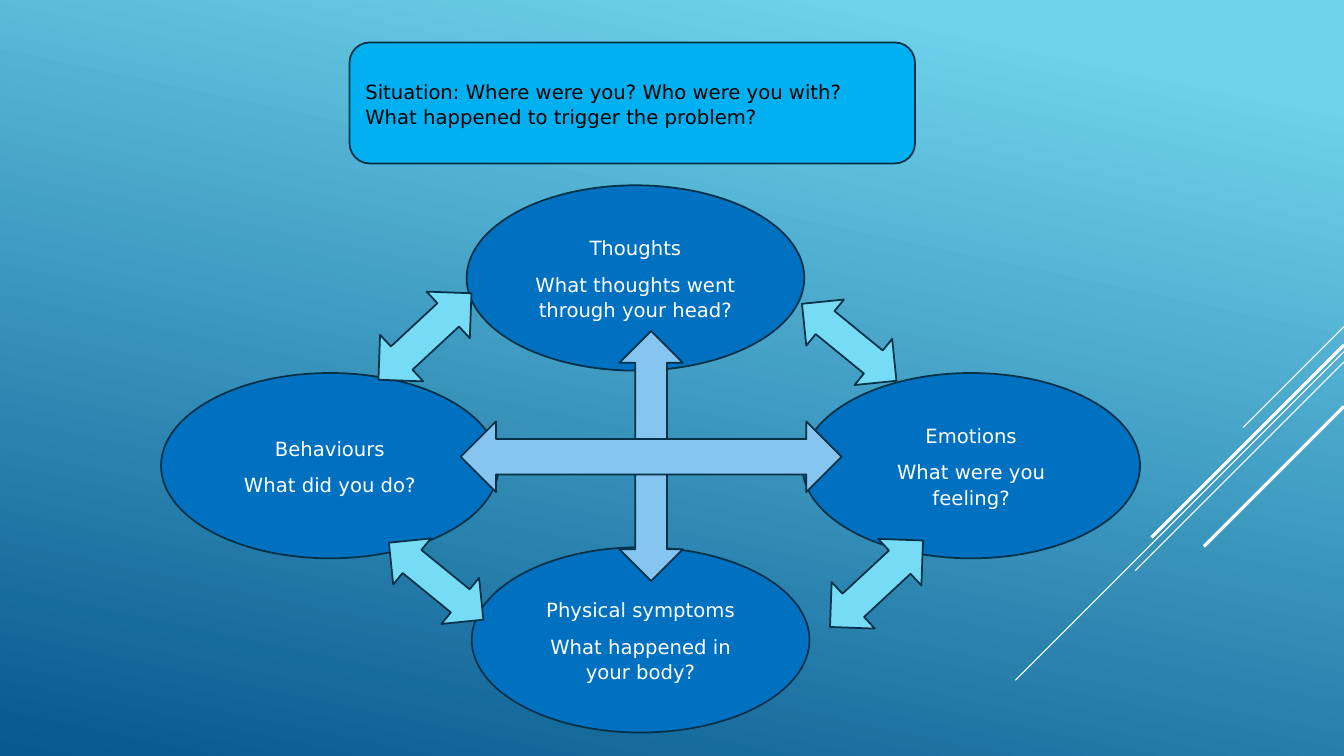
from lxml import etree
from pptx import Presentation
from pptx.dml.color import RGBColor
from pptx.enum import shapes, text
from pptx.oxml.ns import qn
from pptx.util import Cm, Pt

HUES = {
    "sky": "6ED2EB", "deep": "06588E", "white": "FFFFFF", "black": "000000",
    "edge": "043148", "box": "00B0F0", "oval": "0070C0",
    "side": "76DBF4", "cross": "86C5EF",
}
FONT = "DejaVu Sans"
WIDE, HIGH = 33.87, 19.05
RAYS = [
    (8.23, 2.54, 0.75),
    (8.86, 8.28, 0.75),
    (9.12, 5.26, 0.75),
    (8.69, 4.85, 2.25),
    (10.24, 3.53, 2.25),
]
PROMPT = ["Situation: Where were you? Who were you with? What happened to trigger the problem?"]
SIZE = (8.51, 4.67)
OVALS = [
    (11.76, 4.67, ["Thoughts", "What thoughts went through your head?"]),
    (20.22, 9.4, ["Emotions", "What were you feeling?"]),
    (11.89, 13.79, ["Physical symptoms", "What happened in your body?"]),
    (4.06, 9.4, ["Behaviours", "What did you do?"]),
]
RISE = (1.6, 3.2, 47.1)
FALL = (1.5, 3.07, 129.2)
SIDES = [
    (9.91, 6.88, RISE),
    (20.65, 7.09, FALL),
    (21.29, 13.11, RISE),
    (10.24, 13.11, FALL),
]
CROSS = [
    (13.26, 10.69, (6.3, 1.6, 90)),
    (11.61, 10.62, (9.6, 1.78, 180)),
]
KIND = shapes.MSO_SHAPE
ALIGN = text.PP_ALIGN


def tint(name):
    return RGBColor.from_string(HUES[name])


def draw(kind, left, top, wide, high, hue, turn=0):
    item = slide.shapes.add_shape(kind, Cm(left), Cm(top), Cm(wide), Cm(high))
    item.shadow.inherit = False
    item.fill.solid()
    item.fill.fore_color.rgb = tint(hue)
    item.line.color.rgb = tint("edge")
    item.line.width = Pt(1.25)
    item.rotation = turn
    return item


def write(item, lines, hue, align):
    frame = item.text_frame
    frame.word_wrap = True
    frame.vertical_anchor = text.MSO_ANCHOR.MIDDLE
    for i, line in enumerate(lines):
        para = frame.add_paragraph() if i else frame.paragraphs[0]
        para.alignment = align
        para.line_spacing = 1.07
        para.space_after = Pt(8)
        run = para.add_run()
        run.text = line
        run.font.name = FONT
        run.font.size = Pt(14)
        run.font.color.rgb = tint(hue)


deck = Presentation()
deck.slide_width, deck.slide_height = Cm(WIDE), Cm(HIGH)
slide = deck.slides.add_slide(deck.slide_layouts[6])

back = slide.background.fill
back.gradient()
back.gradient_angle = 360 - 102
for stop, (spot, hue) in zip(back.gradient_stops, [(0.1, "sky"), (1, "deep")]):
    stop.position = spot
    stop.color.rgb = tint(hue)

for top, span, thick in RAYS:
    ray = slide.shapes.add_connector(
        shapes.MSO_CONNECTOR.STRAIGHT,
        Cm(WIDE), Cm(top), Cm(WIDE - span), Cm(top + span))
    ray.line.color.rgb = tint("white")
    ray.line.width = Pt(thick)
    etree.SubElement(ray._element.spPr, qn("a:effectLst"))

box = draw(KIND.ROUNDED_RECTANGLE, 8.81, 1.07, 14.25, 3.05, "box")
write(box, PROMPT, "black", ALIGN.LEFT)

for left, top, lines in OVALS:
    oval = draw(KIND.FLOWCHART_CONNECTOR, left, top, *SIZE, "oval")
    write(oval, lines, "white", ALIGN.CENTER)

for kind, hue, group in [
    (KIND.UP_DOWN_ARROW, "side", SIDES),
    (KIND.LEFT_RIGHT_ARROW, "cross", CROSS),
]:
    for left, top, (wide, high, turn) in group:
        draw(kind, left, top, wide, high, hue, turn)

deck.save("out.pptx")
